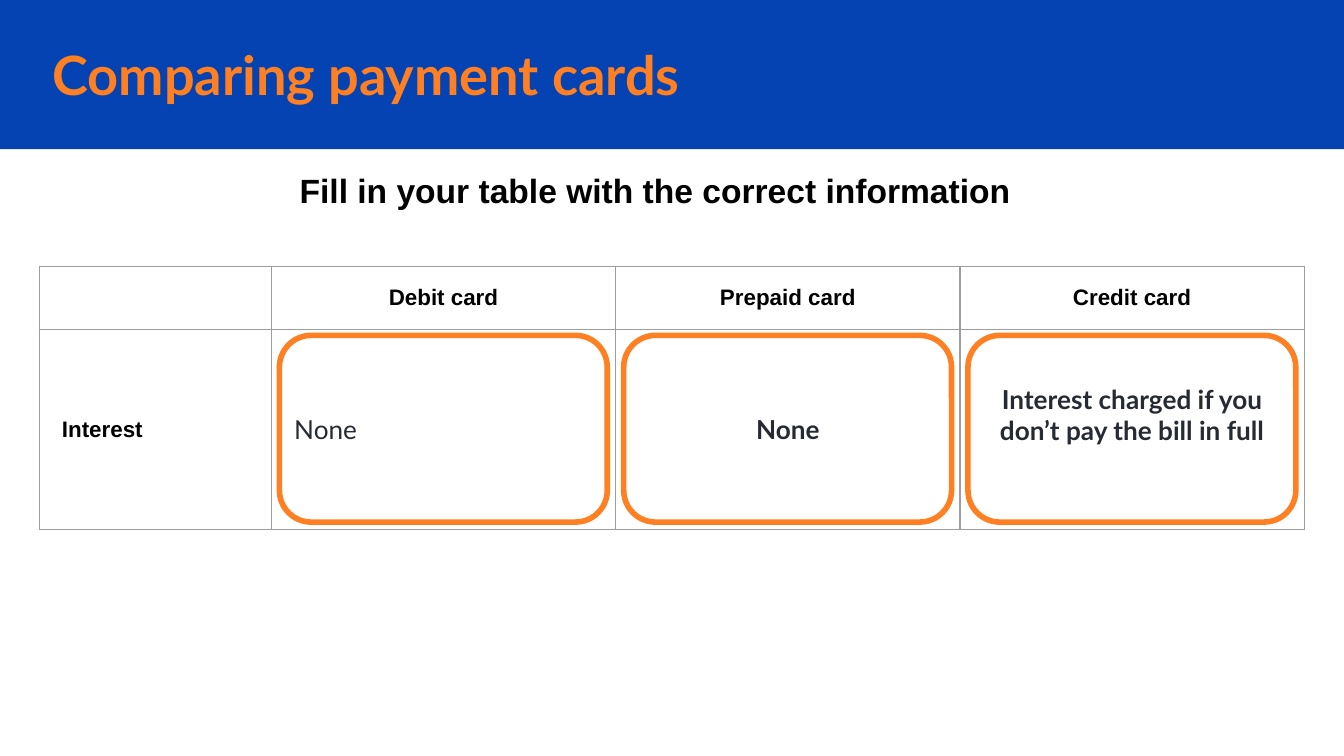
from dataclasses import dataclass

from lxml import etree
from pptx import Presentation
from pptx.dml.color import RGBColor
from pptx.enum.shapes import MSO_SHAPE
from pptx.enum.text import MSO_ANCHOR, MSO_AUTO_SIZE, PP_ALIGN
from pptx.oxml.ns import qn
from pptx.util import Cm, Pt

RECT, ROUND = MSO_SHAPE.RECTANGLE, MSO_SHAPE.ROUNDED_RECTANGLE
LEFT, CENTER = PP_ALIGN.LEFT, PP_ALIGN.CENTER
MIDDLE, TOP = MSO_ANCHOR.MIDDLE, MSO_ANCHOR.TOP
FIXED = MSO_AUTO_SIZE.NONE


@dataclass(frozen=True)
class Style:
    size: float
    font: str
    color: str
    bold: bool = True


@dataclass(frozen=True)
class Theme:
    blue: str = "0543B3"
    orange: str = "FF8022"
    grid: str = "9E9E9E"
    white: str = "FFFFFF"
    title: Style = Style(29, "Lato", "FF8022")
    task: Style = Style(18, "Arial", "000000")
    label: Style = Style(12, "Arial", "000000")
    answer: Style = Style(14, "Lato", "262A33")
    plain: Style = Style(14, "Lato", "262A33", False)


THEME = Theme()
HEADS = ["Debit card", "Prepaid card", "Credit card"]
ROW = [
    ("Interest", THEME.label, LEFT, 0.43),
    ("None", THEME.plain, LEFT, 0.43),
    ("None", THEME.answer, CENTER, 0.43),
    ("Interest charged if you don’t pay the bill in full",
     THEME.answer, CENTER, 0.99),
]


def paint(fill, color):
    fill.solid()
    fill.fore_color.rgb = RGBColor.from_string(color)


def write(frame, text, style, align):
    para = frame.paragraphs[0]
    para.alignment = align
    run = para.add_run()
    run.text = text
    font = run.font
    font.size, font.name, font.bold = Pt(style.size), style.font, style.bold
    font.color.rgb = RGBColor.from_string(style.color)


def set_frame(frame, anchor):
    frame.word_wrap = True
    frame.auto_size = FIXED
    frame.vertical_anchor = anchor
    frame.margin_left = frame.margin_right = Cm(0.25)
    frame.margin_top = frame.margin_bottom = Cm(0.25)


def edge(cell):
    props = cell._tc.get_or_add_tcPr()
    for spot, side in enumerate(("a:lnL", "a:lnR", "a:lnT", "a:lnB")):
        line = etree.Element(qn(side), w=str(Pt(0.75)))
        solid = etree.SubElement(line, qn("a:solidFill"))
        etree.SubElement(solid, qn("a:srgbClr"), val=THEME.grid)
        props.insert(spot, line)


def set_cell(cell, text, style, align, side, top, foot):
    cell.vertical_anchor = MIDDLE
    cell.margin_left = cell.margin_right = Cm(side)
    cell.margin_top, cell.margin_bottom = Cm(top), Cm(foot)
    write(cell.text_frame, text, style, align)


def add_header(slide, x, y, w, h):
    band = slide.shapes.add_shape(RECT, Cm(x), Cm(y), Cm(w), Cm(h))
    band.shadow.inherit = False
    paint(band.fill, THEME.blue)
    band.line.fill.background()
    title = slide.shapes.title
    title._element.addprevious(band._element)
    title.left, title.top = Cm(x + 0.74), Cm(y + 0.69)
    title.width, title.height = Cm(21.49), Cm(1.42)
    set_frame(title.text_frame, MIDDLE)
    write(title.text_frame, "Comparing payment cards", THEME.title, LEFT)


def add_task(slide, x, y, w, h):
    box = slide.shapes.add_textbox(Cm(x), Cm(y), Cm(w), Cm(h))
    set_frame(box.text_frame, TOP)
    write(box.text_frame, "Fill in your table with the correct information",
          THEME.task, CENTER)


def add_grid(slide, x, y, w, h):
    first, head = 4.39, 1.19
    step = (w - first) / len(HEADS)
    grid = slide.shapes.add_table(
        2, len(ROW), Cm(x), Cm(y), Cm(w), Cm(h)).table
    grid.first_row = grid.horz_banding = False
    for col, wide in zip(grid.columns, [first] + [step] * len(HEADS)):
        col.width = Cm(wide)
    grid.rows[0].height, grid.rows[1].height = Cm(head), Cm(h - head)
    for cell in grid.iter_cells():
        edge(cell)
        paint(cell.fill, THEME.white)
    for i, text in enumerate(HEADS, 1):
        set_cell(grid.cell(0, i), text, THEME.label, CENTER, 0.25, 0.13, 0.13)
    for i, (text, style, align, foot) in enumerate(ROW):
        set_cell(grid.cell(1, i), text, style, align, 0.43, 0.43, foot)
    for i in range(len(HEADS)):
        add_frame(slide, x + first + i * step + 0.15, y + head + 0.11,
                  step - 0.31, h - head - 0.25)


def add_frame(slide, x, y, w, h):
    ring = slide.shapes.add_shape(ROUND, Cm(x), Cm(y), Cm(w), Cm(h))
    ring.shadow.inherit = False
    ring.adjustments[0] = 0.17
    ring.fill.background()
    ring.line.color.rgb = RGBColor.from_string(THEME.orange)
    ring.line.width = Pt(3)


def main():
    deck = Presentation()
    deck.slide_width, deck.slide_height = Cm(25.4), Cm(14.29)
    slide = deck.slides.add_slide(deck.slide_layouts.get_by_name("Title Only"))
    paint(slide.background.fill, THEME.white)
    add_header(slide, 0, 0, 25.4, 2.82)
    add_grid(slide, 0.74, 5.04, 23.91, 4.97)
    add_task(slide, 5.36, 2.97, 14.05, 1.27)
    deck.save("out.pptx")


if __name__ == "__main__":
    main()
